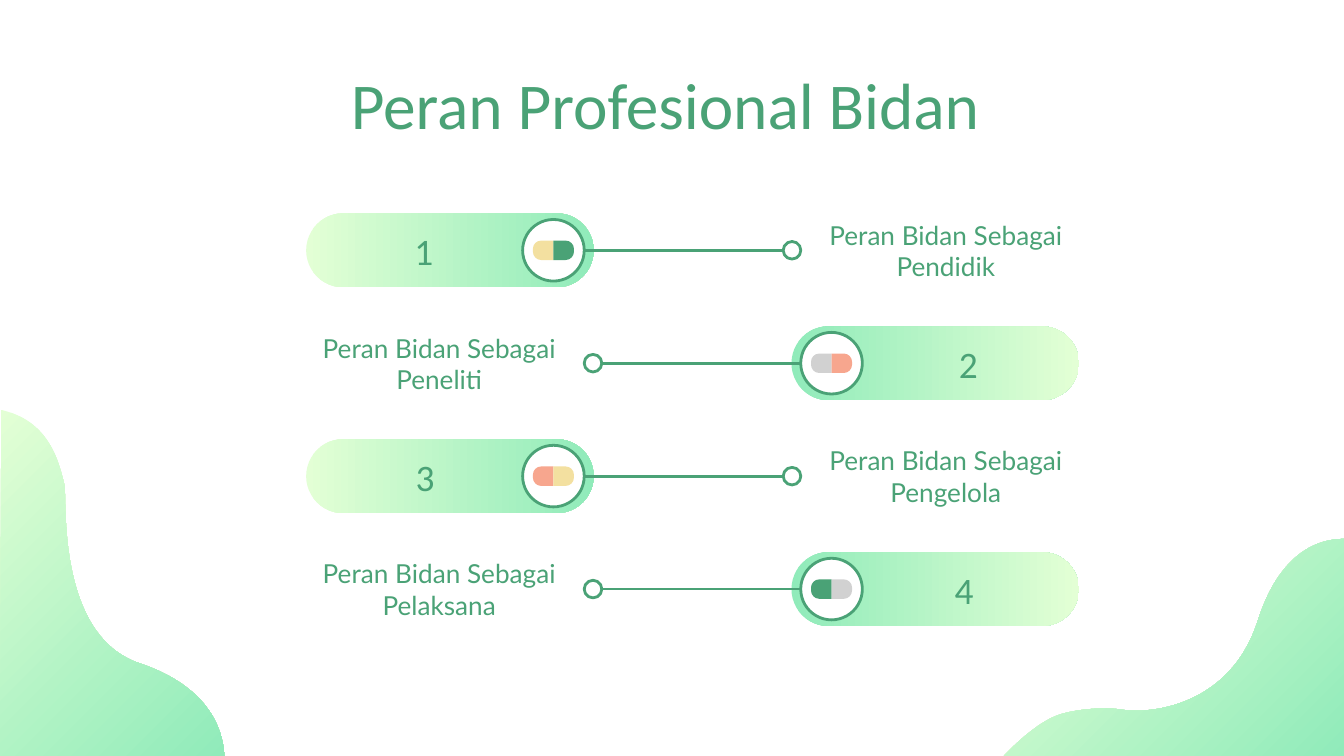
import pptx
import pptx.util
from pptx.dml.color import RGBColor
from pptx.enum.shapes import MSO_CONNECTOR, MSO_SHAPE
from pptx.enum.text import MSO_ANCHOR, PP_ALIGN
from pptx.oxml.ns import qn
import lxml.etree

Pt = pptx.util.Pt

COLORS = {
    "green": "4AA276", "pale": "E3FFD5", "mint": "90EBBA", "white": "FFFFFF",
    "yellow": "F3E0A0", "gray": "D1D1D1", "salmon": "F7A68E",
}

# Number, its offset and width in the pill, caption, capsule colours
ROLES = [
    (" 1", 14.4, 92.9, "Peran Bidan Sebagai Pendidik", ("yellow", "green")),
    (" 2", 15.8, 91.4, "Peran Bidan Sebagai Peneliti", ("gray", "salmon")),
    ("3", 20.2, 87.1, "Peran Bidan Sebagai Pengelola", ("salmon", "yellow")),
    (" 4", 20.2, 87.1, "Peran Bidan Sebagai Pelaksana", ("green", "gray")),
]

# Outlines: pairs are corners, sextets are cubic curves
LEFT_WAVE = [(120.2, 185.4), (119.5, 172, 113, 149, 75.6, 136),
             (30.2, 121.7, 36, 49, 34.6, 40.3),
             (31, 25.2, 25.2, 5.8, 0.7, 0), (0, 185.4)]
RIGHT_WAVE = [(182.2, 0), (169, 0, 148, 6.5, 136, 44),
              (121.7, 88.6, 80, 94.3, 62.6, 91.4),
              (52.6, 90, 39.6, 91.4, 31.7, 93.6),
              (17.3, 97.2, 0, 116.3, 0, 116.3), (182.2, 116.3)]
HALF_CAPSULE = [(0, -5.2), (-6.6, -5.2), (-9, -5.2, -11, -3.2, -11, -0.7),
                (-11, 0.7), (-11, 3.2, -9, 5.2, -6.6, 5.2), (0, 5.2)]


def rgb(name):
    return RGBColor.from_string(COLORS[name])


def solid(sp, color):
    sp.fill.solid()
    sp.fill.fore_color.rgb = rgb(color)


def gradient(sp, colors, angle):
    sp.fill.gradient()
    sp.fill.gradient_angle = angle
    for stop, color in zip(sp.fill.gradient_stops, colors):
        stop.color.rgb = rgb(color)


def stroke(sp):
    sp.line.color.rgb = rgb("green")
    sp.line.width = Pt(1.5)


def add_shape(s, kind, x, y, w, h):
    sp = s.shapes.add_shape(kind, Pt(x), Pt(y), Pt(w), Pt(h))
    sp.shadow.inherit = False
    return sp


def add_outline(s, x, y, outline, sign=1):
    """Draw an outline from (x, y); sign -1 mirrors it left to right."""
    segments = [[(Pt(x + sign * px), Pt(y + py)) for px, py in zip(seg[::2], seg[1::2])]
                for seg in outline]
    ends = [seg[-1] for seg in segments]
    builder = s.shapes.build_freeform(*ends[0], scale=1.0)
    builder.add_line_segments(ends[1:], close=True)
    sp = builder.convert_to_shape()

    # Bend the straight segments that have control points
    for line, seg in zip(list(sp.element.iter(qn("a:lnTo"))), segments[1:]):
        if len(seg) == 3:
            curve = lxml.etree.Element(qn("a:cubicBezTo"))
            for px, py in seg:
                lxml.etree.SubElement(curve, qn("a:pt"), x=str(px - sp.left),
                                      y=str(py - sp.top))
            line.getparent().replace(line, curve)
    sp.shadow.inherit = False
    sp.line.fill.background()
    return sp


def format_text(sp, text, font, size):
    tf = sp.text_frame
    tf.text = text
    tf.word_wrap = True
    tf.vertical_anchor = MSO_ANCHOR.MIDDLE
    tf.margin_left = tf.margin_right = tf.margin_top = tf.margin_bottom = Pt(7.2)
    p = tf.paragraphs[0]
    p.alignment = PP_ALIGN.CENTER
    r = p.runs[0]
    r.font.name, r.font.size = font, Pt(size)
    r.font.color.rgb = rgb("green")


def add_text(s, x, y, w, h, text, font, size):
    sp = s.shapes.add_textbox(Pt(x), Pt(y), Pt(w), Pt(h))
    format_text(sp, text, font, size)


def add_waves(s, width, height):
    for x, y, outline in ((width - 182.2, height - 116.3, RIGHT_WAVE),
                          (0, height - 185.4, LEFT_WAVE)):
        gradient(add_outline(s, x, y, outline), ("pale", "mint"), 315)


def add_title(s, x, y, w, h):
    sp = s.shapes.title
    sp.left, sp.top, sp.width, sp.height = Pt(x), Pt(y), Pt(w), Pt(h)
    format_text(sp, "Peran Profesional Bidan ", "Calibri", 35)


def add_role(s, x, y, w, h, role, mirrored):
    number, number_offset, number_width, caption, halves = role
    mid = y + h / 2

    def left(offset, width):
        return x + w - offset - width if mirrored else x + offset

    # Pill with its number
    pill = add_shape(s, MSO_SHAPE.ROUNDED_RECTANGLE, left(0, 154), y, 154, h)
    pill.adjustments[0] = 0.5
    pill.line.fill.background()
    gradient(pill, ("mint", "pale") if mirrored else ("pale", "mint"), 0)
    add_text(s, left(number_offset, number_width), y, number_width, h,
             number, "Calibri", 20)

    # Node, connecting line and end ring
    node = add_shape(s, MSO_SHAPE.OVAL, left(116, 33), mid - 16.5, 33, 33)
    solid(node, "white")
    stroke(node)
    line = s.shapes.add_connector(MSO_CONNECTOR.STRAIGHT, Pt(left(149, 0)), Pt(mid),
                                  Pt(left(255.6, 0)), Pt(mid))
    stroke(line)
    lxml.etree.SubElement(line.element.spPr, qn("a:effectLst"))
    ring = add_shape(s, MSO_SHAPE.OVAL, left(255.6, 9.4), mid - 4.7, 9.4, 9.4)
    ring.fill.background()
    stroke(ring)

    # Two-coloured capsule in the node
    for color, sign in zip(halves, (1, -1)):
        solid(add_outline(s, left(132.5, 0), mid, HALF_CAPSULE, sign), color)

    add_text(s, left(271.4, 142.6), y, 142.6, h, caption, "Lato", 14)


def main():
    prs = pptx.Presentation()
    prs.slide_width, prs.slide_height = Pt(720), Pt(405)
    s = prs.slides.add_slide(prs.slide_layouts[5])
    add_waves(s, 720, 405)
    add_title(s, 56.9, 42.8, 607, 25.2)
    for i, role in enumerate(ROLES):
        add_role(s, 164, 114.3 + 60.5 * i, 414, 39.6, role, i % 2 == 1)
    prs.save("out.pptx")


if __name__ == "__main__":
    main()
